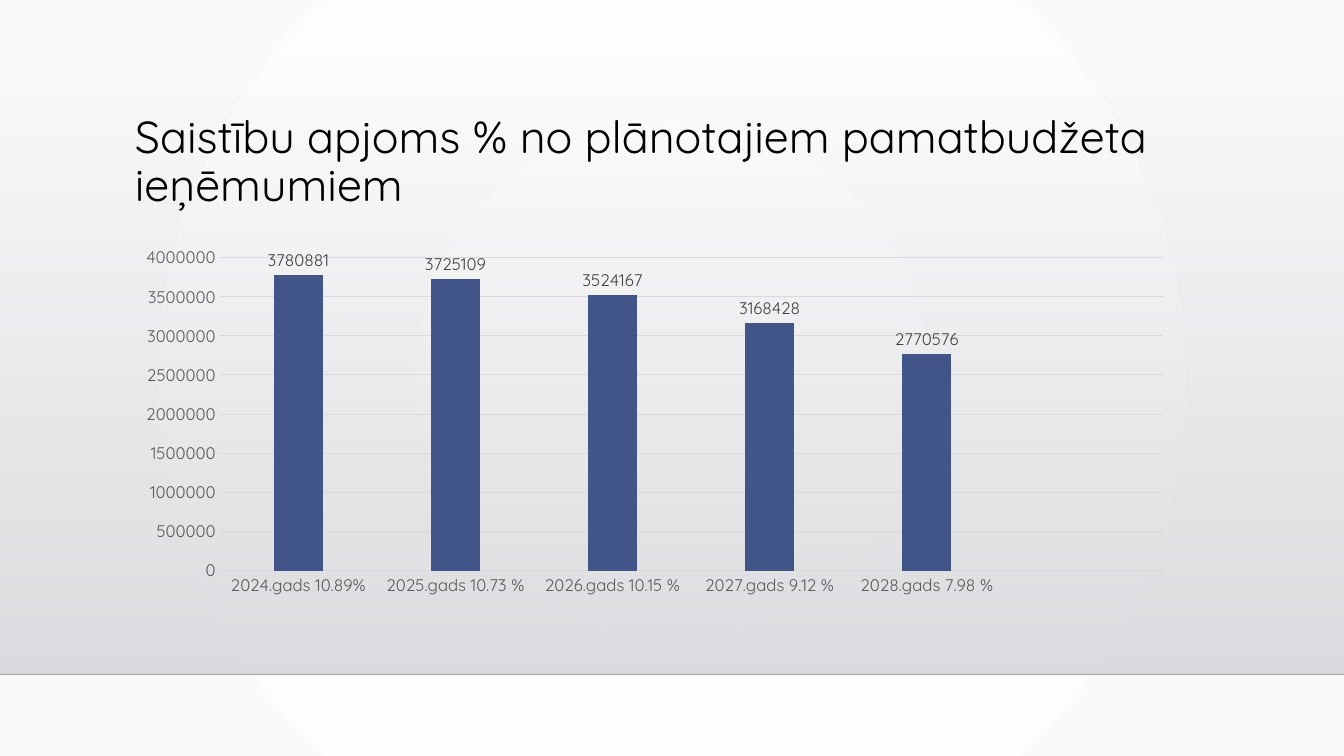
from typing import NamedTuple

from lxml.etree import SubElement
from pptx import Presentation
from pptx.chart.chart import Chart
from pptx.chart.data import CategoryChartData
from pptx.dml.color import RGBColor
from pptx.dml.fill import FillFormat
from pptx.enum.chart import XL_CHART_TYPE, XL_LABEL_POSITION, XL_TICK_MARK
from pptx.enum.shapes import MSO_CONNECTOR, MSO_SHAPE
from pptx.enum.text import MSO_ANCHOR
from pptx.oxml import parse_xml
from pptx.oxml.ns import nsdecls, qn
from pptx.slide import Slide
from pptx.text.text import Font
from pptx.util import Inches, Pt

FONT = "Quicksand"
COLORS = {
    "center": "FFFFFF",
    "edge": "FAFAFA",
    "wall_top": "DCDCE0",
    "wall_bottom": "DEDEE2",
    "floor": "000001",
    "title": "000000",
    "axis": "595959",
    "grid": "D9D9D9",
    "bar": "415588",
    "label": "404040",
}
WIDTH, HEIGHT = 13.33, 7.5
FLOOR = 6.69
WALL_TOP = 0.51
LEFT, CONTENT_WIDTH = 1.24, 10.5


class YearLiability(NamedTuple):
    label: str
    amount: int | None


LIABILITIES = [
    YearLiability("2024.gads 10.89%", 3780881),
    YearLiability("2025.gads 10.73 %", 3725109),
    YearLiability("2026.gads 10.15 %", 3524167),
    YearLiability("2027.gads 9.12 %", 3168428),
    YearLiability("2028.gads 7.98 %", 2770576),
    YearLiability("", None),
]


def color(name: str) -> RGBColor:
    return RGBColor.from_string(COLORS[name])


def style_font(font: Font, size: float, color_name: str) -> None:
    font.name = FONT
    font.size = Pt(size)
    font.bold = False
    font.color.rgb = color(color_name)


def set_gradient(fill: FillFormat, first: str, last: str) -> None:
    fill.gradient()
    for stop, name in zip(fill.gradient_stops, (first, last)):
        stop.color.rgb = color(name)


def set_alpha(element, percent: int) -> None:
    rgb = element.find(".//" + qn("a:srgbClr"))
    SubElement(rgb, qn("a:alpha")).set("val", str(percent * 1000))


def paint_background(slide: Slide) -> None:
    set_gradient(slide.background.fill, "center", "edge")
    linear = slide.element.find(".//" + qn("a:lin"))
    linear.getparent().replace(linear, parse_xml(
        f'<a:path {nsdecls("a")} path="circle">'
        '<a:fillToRect l="50000" t="50000" r="50000" b="50000"/></a:path>'
    ))


def add_wall(slide: Slide) -> None:
    wall = slide.shapes.add_shape(
        MSO_SHAPE.RECTANGLE, 0, Inches(WALL_TOP), Inches(WIDTH), Inches(FLOOR - WALL_TOP)
    )
    wall.shadow.inherit = False
    wall.line.fill.background()
    set_gradient(wall.fill, "wall_top", "wall_bottom")
    wall.fill.gradient_angle = 270
    set_alpha(wall.element.spPr, 0)

    floor = slide.shapes.add_connector(
        MSO_CONNECTOR.STRAIGHT, 0, Inches(FLOOR), Inches(WIDTH), Inches(FLOOR)
    )
    floor.line.width = Pt(1)
    floor.line.color.rgb = color("floor")
    properties = floor.element.spPr
    set_alpha(properties, 20)
    SubElement(properties, qn("a:effectLst"))


def add_title(slide: Slide) -> None:
    title = slide.shapes.add_textbox(
        Inches(LEFT), Inches(1.04), Inches(CONTENT_WIDTH), Inches(1.15)
    )
    text_frame = title.text_frame
    text_frame.word_wrap = True
    text_frame.vertical_anchor = MSO_ANCHOR.MIDDLE
    text_frame.text = "Saistību apjoms % no plānotajiem pamatbudžeta ieņēmumiem"
    paragraph = text_frame.paragraphs[0]
    paragraph.line_spacing = 0.9
    style_font(paragraph.runs[0].font, 32, "title")


def style_axes(chart: Chart) -> None:
    for axis in (chart.category_axis, chart.value_axis):
        axis.major_tick_mark = XL_TICK_MARK.NONE
        axis.minor_tick_mark = XL_TICK_MARK.NONE
        style_font(axis.tick_labels.font, 12, "axis")
    chart.value_axis.format.line.fill.background()
    chart.value_axis.has_major_gridlines = True
    for line in (
        chart.category_axis.format.line,
        chart.value_axis.major_gridlines.format.line,
    ):
        line.width = Pt(0.75)
        line.color.rgb = color("grid")


def add_liability_chart(slide: Slide) -> None:
    data = CategoryChartData()
    data.categories = [liability.label for liability in LIABILITIES]
    data.add_series("Series 1", [liability.amount for liability in LIABILITIES])
    chart = slide.shapes.add_chart(
        XL_CHART_TYPE.COLUMN_CLUSTERED,
        Inches(LEFT), Inches(2.38), Inches(CONTENT_WIDTH), Inches(3.6), data,
    ).chart
    chart.has_title = False
    chart.has_legend = False
    style_font(chart.font, 10, "title")
    style_axes(chart)

    plot = chart.plots[0]
    plot.vary_by_categories = False
    plot.gap_width = 219
    plot.overlap = -27
    series = plot.series[0]
    series.format.fill.solid()
    series.format.fill.fore_color.rgb = color("bar")
    labels = series.data_labels
    labels.show_value = True
    labels.position = XL_LABEL_POSITION.OUTSIDE_END
    style_font(labels.font, 12, "label")


def main() -> None:
    presentation = Presentation()
    presentation.slide_width = Inches(WIDTH)
    presentation.slide_height = Inches(HEIGHT)
    slide = presentation.slides.add_slide(presentation.slide_layouts[6])
    paint_background(slide)
    add_wall(slide)
    add_title(slide)
    add_liability_chart(slide)
    presentation.save("out.pptx")


if __name__ == "__main__":
    main()
